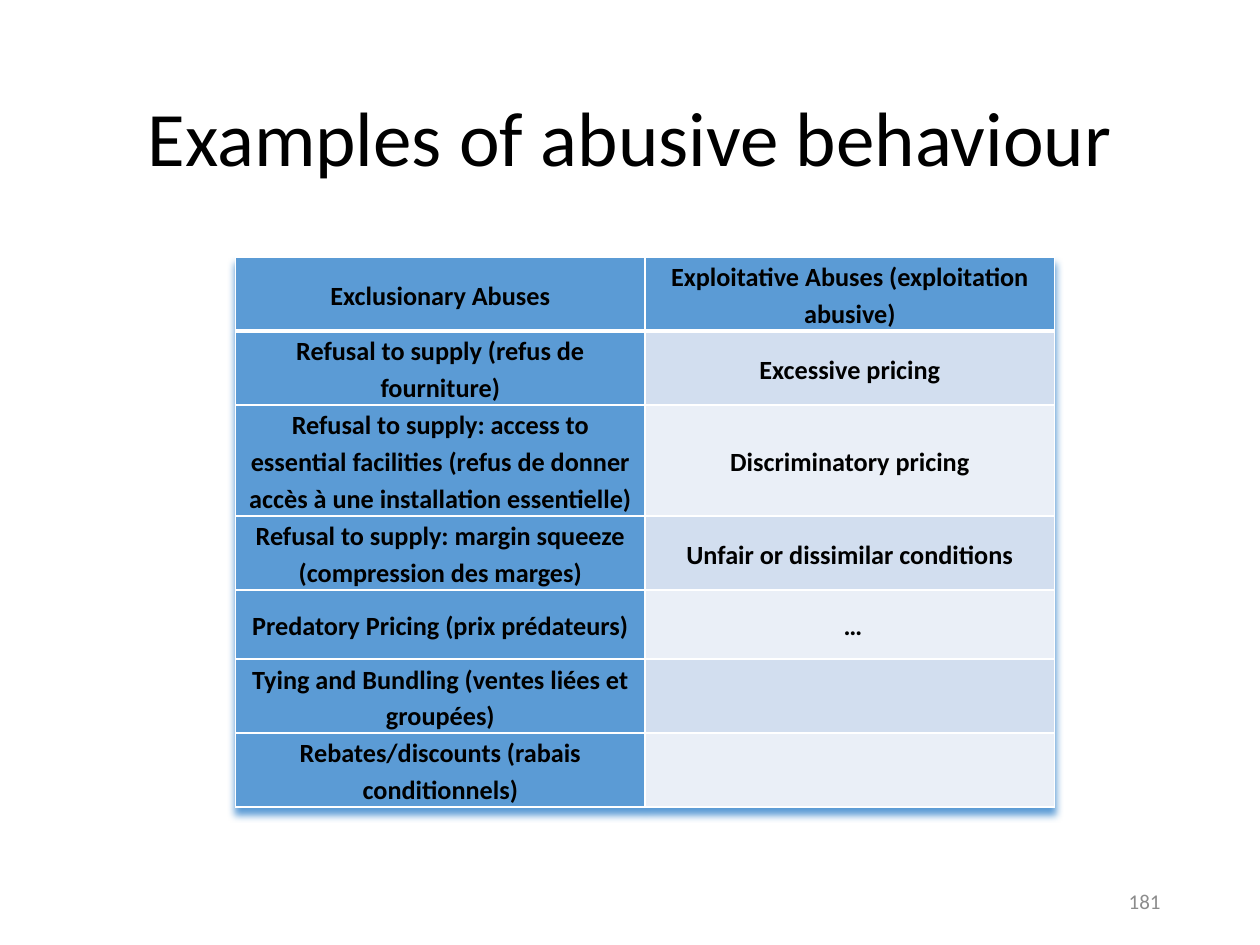
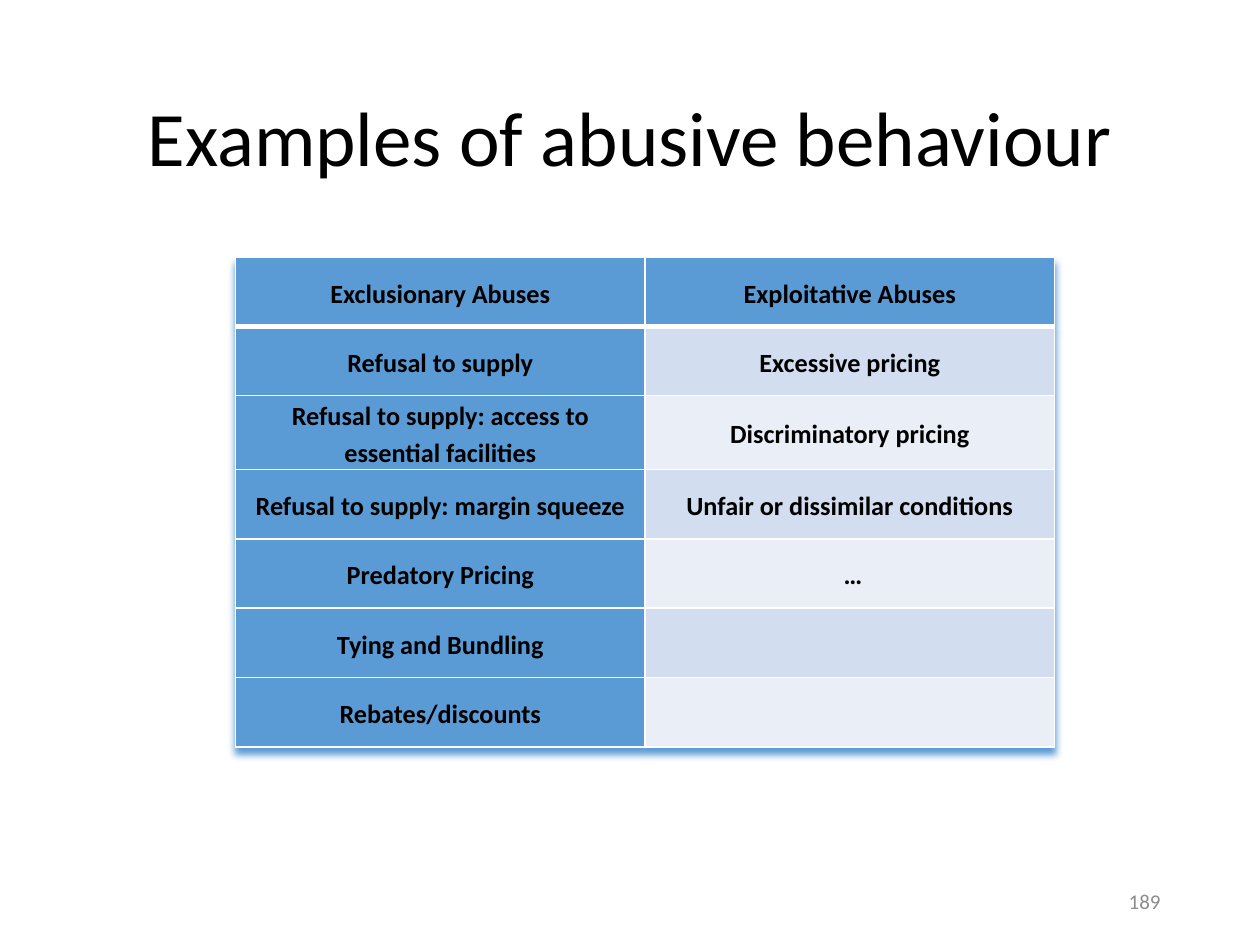
from lxml import etree
from pptx import Presentation
from pptx.dml.color import RGBColor
from pptx.enum.text import MSO_ANCHOR, MSO_AUTO_SIZE, PP_ALIGN
from pptx.oxml import parse_xml
from pptx.oxml.ns import qn
from pptx.util import Inches, Pt

MIDDLE = MSO_ANCHOR.MIDDLE
FIXED = MSO_AUTO_SIZE.NONE
CENTER = PP_ALIGN.CENTER
RIGHT = PP_ALIGN.RIGHT

HUES = {
    "text": "000000",
    "page": "8C8C8C",
    "head": "5B9BD5",
    "odd": "D2DEEF",
    "even": "EAEFF7",
    "line": "FFFFFF",
}
FONT = "Calibri"
TITLE = "Examples of abusive behaviour"
TALL = 2
SHADOW = (
    '<a:effectLst xmlns:a="http://schemas.openxmlformats.org/drawingml/2006/main">'
    '<a:outerShdw blurRad="50800" dist="50800" dir="5400000" algn="ctr" rotWithShape="0">'
    f'<a:srgbClr val="{HUES["head"]}"/></a:outerShdw></a:effectLst>'
)

FULL = [
    ("Exclusionary Abuses", "Exploitative Abuses (exploitation abusive)"),
    ("Refusal to supply (refus de fourniture)", "Excessive pricing"),
    (
        "Refusal to supply: access to essential facilities "
        "(refus de donner accès à une installation essentielle)",
        "Discriminatory pricing",
    ),
    (
        "Refusal to supply: margin squeeze (compression des marges)",
        "Unfair or dissimilar conditions",
    ),
    ("Predatory Pricing (prix prédateurs)", " …"),
    ("Tying and Bundling (ventes liées et groupées)", ""),
    ("Rebates/discounts (rabais conditionnels)", ""),
]
SHORT = [[text.split(" (")[0] for text in row] for row in FULL]


class Deck:
    def __init__(self):
        self.prs = Presentation()
        self.prs.slide_width = Inches(10)
        self.prs.slide_height = Inches(7.5)
        self.slide = None

    def start(self):
        self.slide = self.prs.slides.add_slide(self.prs.slide_layouts[5])

    def label(self, frame, text, size, hue, align, space, bold=False):
        frame.text = text
        frame.word_wrap = True
        para = frame.paragraphs[0]
        para.alignment = align
        para.line_spacing = space
        for run in para.runs:
            font = run.font
            font.name = FONT
            font.size = Pt(size)
            font.bold = bold
            font.color.rgb = RGBColor.from_string(HUES[hue])

    def title(self, text):
        box = self.slide.shapes.title
        box.left, box.top = Inches(0.69), Inches(0.4)
        box.width, box.height = Inches(8.62), Inches(1.45)
        frame = box.text_frame
        frame.auto_size = FIXED
        frame.vertical_anchor = MIDDLE
        self.label(frame, text, 44, "text", CENTER, 0.9)

    def page(self, num):
        box = self.slide.shapes.add_textbox(
            Inches(7.06), Inches(6.95), Inches(2.25), Inches(0.4)
        )
        box.text_frame.vertical_anchor = MIDDLE
        self.label(box.text_frame, str(num), 12, "page", RIGHT, 1.0)

    def edge(self, cell, base):
        props = cell._tc.get_or_add_tcPr()
        widths = {"lnL": 1, "lnR": 1, "lnT": 1, "lnB": base}
        for spot, (tag, width) in enumerate(widths.items()):
            line = etree.Element(qn(f"a:{tag}"), w=str(Pt(width)))
            fill = etree.SubElement(line, qn("a:solidFill"))
            etree.SubElement(fill, qn("a:srgbClr"), val=HUES["line"])
            props.insert(spot, line)

    def cell(self, cell, text, hue, base):
        cell.margin_left = cell.margin_right = Inches(0.06)
        cell.margin_top = cell.margin_bottom = 0
        cell.vertical_anchor = MIDDLE
        cell.fill.solid()
        cell.fill.fore_color.rgb = RGBColor.from_string(HUES[hue])
        self.edge(cell, base)
        if text:
            self.label(cell.text_frame, text, 15, "text", CENTER, 1.15, True)

    def table(self, rows):
        high = [0.57 if i == TALL else 0.55 for i in range(len(rows))]
        table = self.slide.shapes.add_table(
            len(rows), 2, Inches(1.87), Inches(2.04), Inches(6.5), Inches(sum(high))
        ).table
        table._tbl.tblPr.insert(0, parse_xml(SHADOW))
        for col in table.columns:
            col.width = Inches(3.25)
        for i, row in enumerate(rows):
            table.rows[i].height = Inches(high[i])
            band = "odd" if i % 2 else "even"
            for j, text in enumerate(row):
                hue = "head" if i == 0 or j == 0 else band
                self.cell(table.cell(i, j), text, hue, 1 if i else 3)


def main():
    deck = Deck()
    for num, rows in ((181, FULL), (189, SHORT)):
        deck.start()
        deck.title(TITLE)
        deck.table(rows)
        deck.page(num)
    deck.prs.save("out.pptx")


if __name__ == "__main__":
    main()
